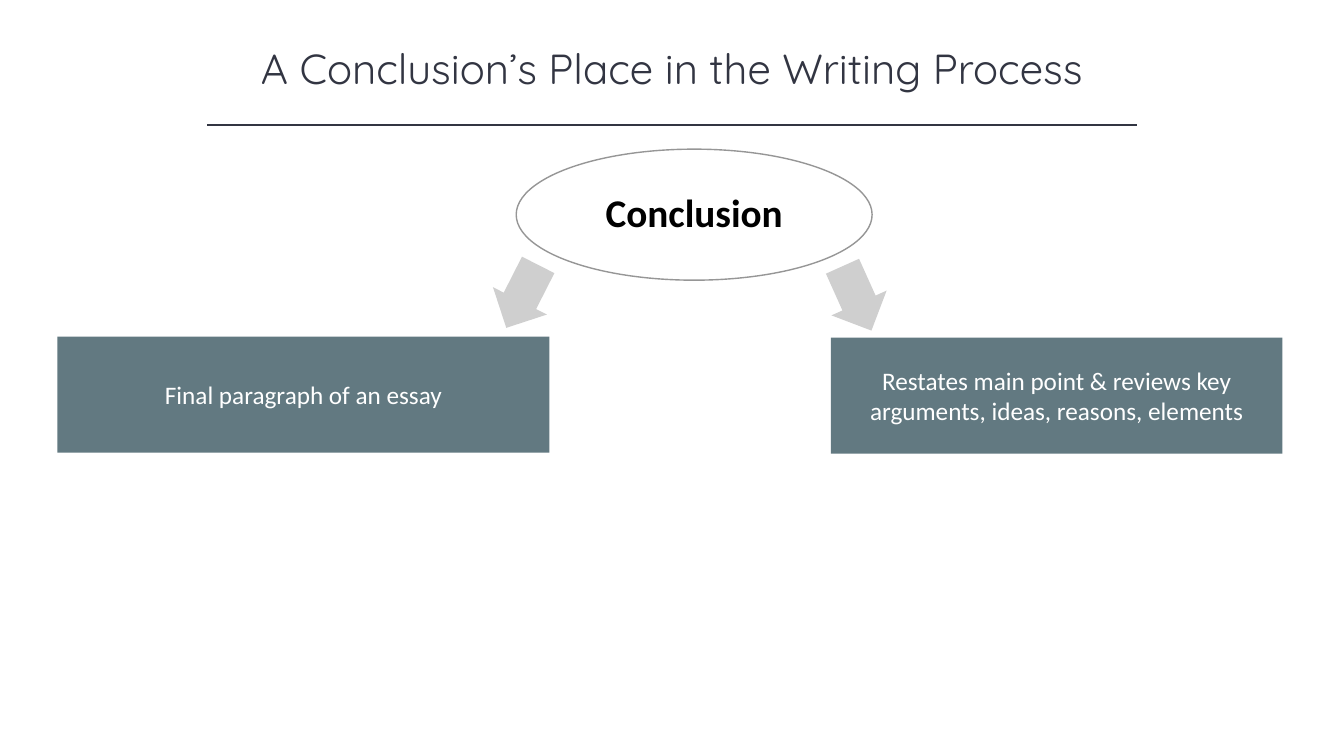
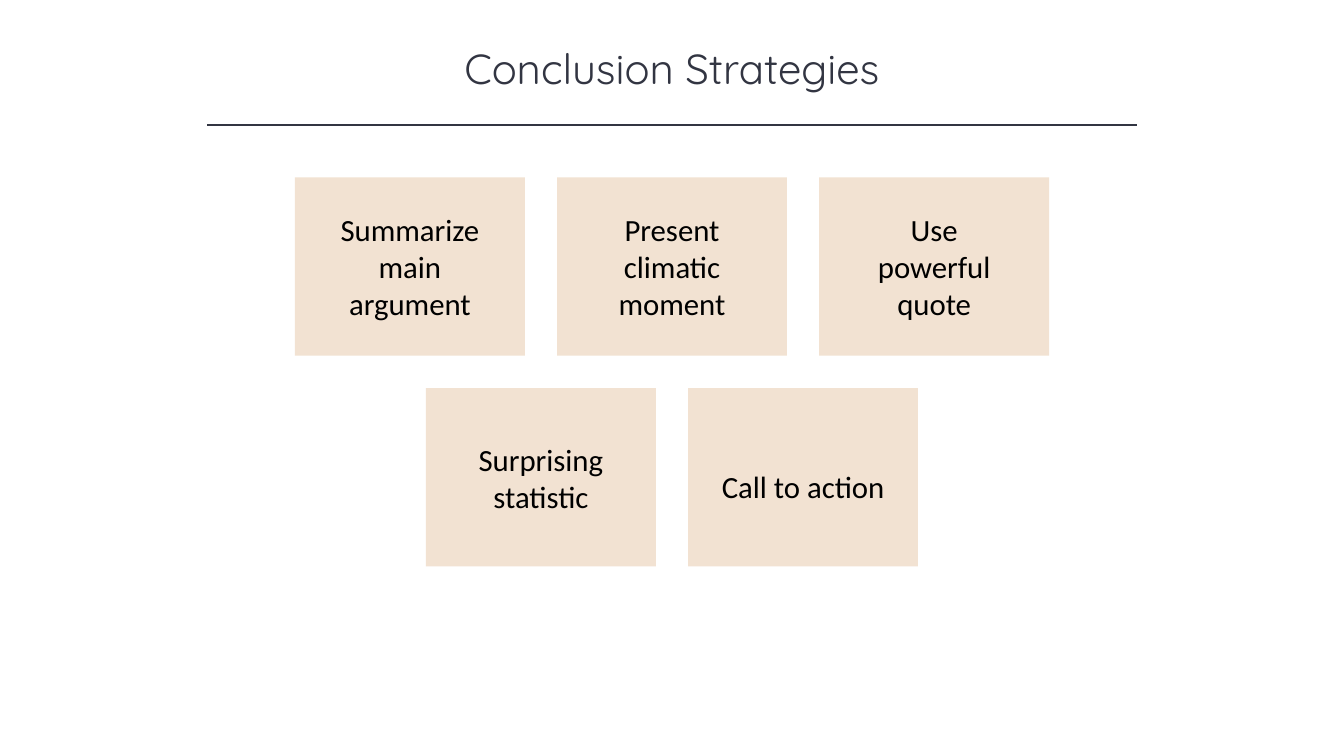
from dataclasses import dataclass

from lxml import etree
from pptx import Presentation
from pptx.dml.color import RGBColor
from pptx.enum.shapes import MSO_CONNECTOR, MSO_SHAPE
from pptx.enum.text import MSO_ANCHOR, PP_ALIGN
from pptx.oxml.ns import qn
from pptx.util import Inches, Pt

RECT = MSO_SHAPE.RECTANGLE
OVAL = MSO_SHAPE.OVAL
LEFT_ARROW = MSO_SHAPE.LEFT_ARROW
STRAIGHT = MSO_CONNECTOR.STRAIGHT
CENTER = PP_ALIGN.CENTER
TOP = MSO_ANCHOR.TOP
MIDDLE = MSO_ANCHOR.MIDDLE

SLIDE_W, SLIDE_H = 13.33, 7.5


@dataclass(frozen=True)
class Theme:
    heading_font: str = "Quicksand"
    body_font: str = "Calibri"
    ink: str = "323542"
    black: str = "000000"
    white: str = "FFFFFF"
    slate: str = "627981"
    sand: str = "F2E2D2"
    arrow: str = "CFCFCF"
    outline: str = "969696"
    title_size: int = 30
    topic_size: int = 28
    card_size: int = 22
    detail_size: int = 18
    line_width: int = 1


class Deck:
    def __init__(self, theme):
        self.theme = theme
        self.prs = Presentation()
        self.prs.slide_width = Inches(SLIDE_W)
        self.prs.slide_height = Inches(SLIDE_H)
        self.s = None

    def new_slide(self, title):
        t = self.theme
        self.s = self.prs.slides.add_slide(self.prs.slide_layouts[6])
        width = 10
        box = self.s.shapes.add_textbox(
            Inches((SLIDE_W - width) / 2), Inches(0.37), Inches(width), Inches(0.61))
        self.set_text(box, title, t.title_size, t.ink, font=t.heading_font, anchor=TOP)
        self.rule(1.24, 9.22)

    def rule(self, y, width):
        left = (SLIDE_W - width) / 2
        line = self.s.shapes.add_connector(
            STRAIGHT, Inches(left), Inches(y), Inches(left + width), Inches(y))
        line.line.color.rgb = RGBColor.from_string(self.theme.ink)
        line.line.width = Pt(self.theme.line_width)
        etree.SubElement(line._element.spPr, qn("a:effectLst"))

    def shape(self, kind, x, y, w, h, fill, outline=None):
        sp = self.s.shapes.add_shape(kind, Inches(x), Inches(y), Inches(w), Inches(h))
        sp.shadow.inherit = False
        sp.fill.solid()
        sp.fill.fore_color.rgb = RGBColor.from_string(fill)
        if outline:
            sp.line.color.rgb = RGBColor.from_string(outline)
            sp.line.width = Pt(self.theme.line_width)
        else:
            sp.line.fill.background()
        return sp

    def set_text(self, sp, text, size, color, font=None, bold=False,
                 anchor=MIDDLE, inset=0.1, spacing=1.0):
        tf = sp.text_frame
        frame_format = {
            "word_wrap": True,
            "vertical_anchor": anchor,
            "margin_left": Inches(inset),
            "margin_right": Inches(inset),
        }
        for name, value in frame_format.items():
            setattr(tf, name, value)
        p = tf.paragraphs[0]
        p.alignment = CENTER
        p.line_spacing = spacing
        r = p.add_run()
        r.text = text
        font_format = {
            "name": font or self.theme.body_font,
            "size": Pt(size),
            "bold": bold,
        }
        for name, value in font_format.items():
            setattr(r.font, name, value)
        r.font.color.rgb = RGBColor.from_string(color)

    def topic(self, text, x, y, w, h):
        t = self.theme
        sp = self.shape(OVAL, x, y, w, h, t.white, t.outline)
        self.set_text(sp, text, t.topic_size, t.black, bold=True, inset=0.02, spacing=0.9)

    def detail(self, text, x, y, w, h):
        t = self.theme
        sp = self.shape(RECT, x, y, w, h, t.slate)
        self.set_text(sp, text, t.detail_size, t.white, inset=0.23)

    def arrow(self, x, y, angle):
        sp = self.shape(LEFT_ARROW, x, y, 0.7, 0.6, self.theme.arrow)
        sp.adjustments[0] = 0.6
        sp.adjustments[1] = 0.5
        sp.rotation = angle

    def card_row(self, cards, y, w, h, gap):
        t = self.theme
        left = (SLIDE_W - len(cards) * w - (len(cards) - 1) * gap) / 2
        for i, (text, spacing) in enumerate(cards):
            sp = self.shape(RECT, left + i * (w + gap), y, w, h, t.sand)
            self.set_text(sp, text, t.card_size, t.black, inset=0.33, spacing=spacing)


def place_slide(deck):
    deck.new_slide("A Conclusion’s Place in the Writing Process")
    deck.detail("Final paragraph of an essay", 0.57, 3.34, 4.88, 1.15)
    deck.detail("Restates main point & reviews key arguments, ideas, reasons, elements",
                8.24, 3.35, 4.48, 1.15)
    deck.topic("Conclusion", 5.12, 1.48, 3.53, 1.3)
    deck.arrow(4.83, 2.64, 296.9)
    deck.arrow(8.15, 2.66, 245.8)


def strategies_slide(deck):
    deck.new_slide("Conclusion Strategies")
    rows = [
        [("Summarize main argument", 1.0),
         ("Present climatic moment", 1.0),
         ("Use powerful quote", 1.0)],
        [("Surprising statistic", 1.0),
         ("Call to action", 1.5)],
    ]
    top, card_w, card_h, gap = 1.76, 2.28, 1.77, 0.32
    for i, cards in enumerate(rows):
        deck.card_row(cards, top + i * (card_h + gap), card_w, card_h, gap)


def main():
    deck = Deck(Theme())
    place_slide(deck)
    strategies_slide(deck)
    deck.prs.save("out.pptx")


if __name__ == "__main__":
    main()
